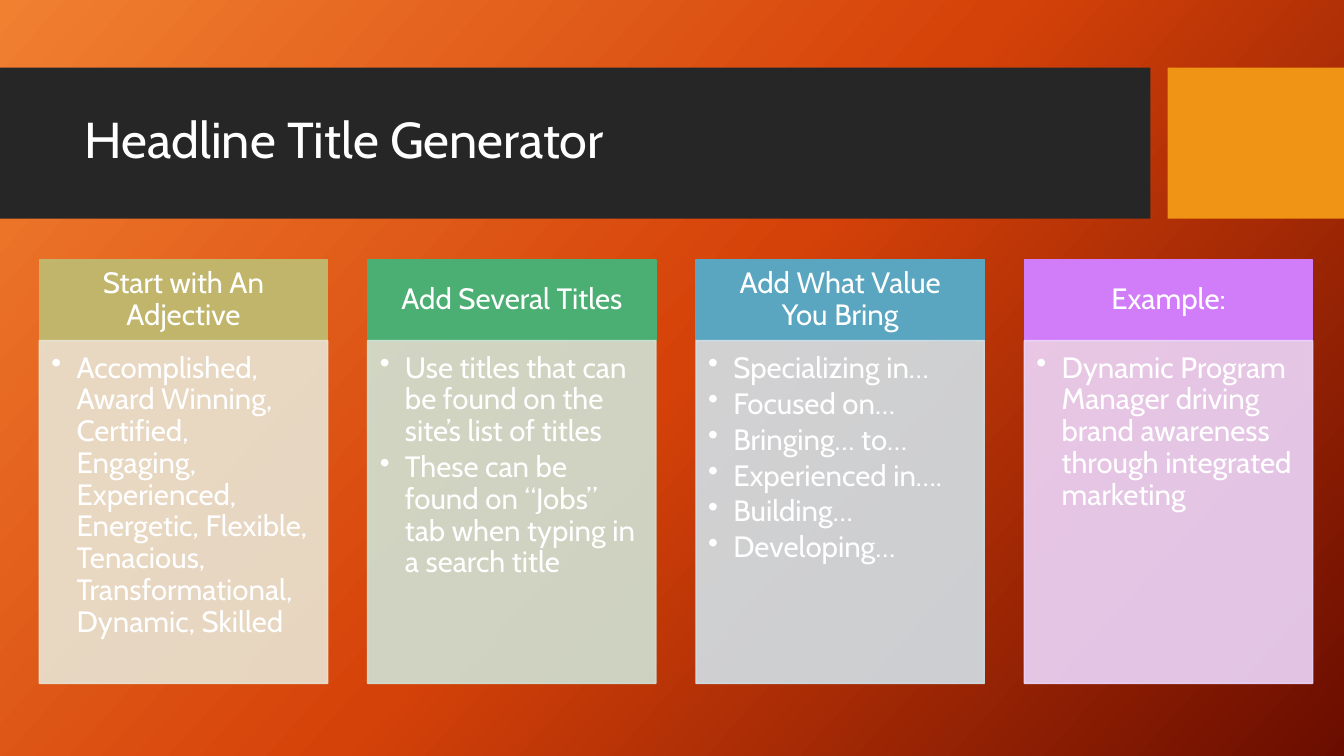
from copy import deepcopy

from lxml import etree
from pptx import Presentation
from pptx.dml.color import RGBColor
from pptx.enum.shapes import MSO_SHAPE
from pptx.enum.text import MSO_ANCHOR, PP_ALIGN
from pptx.oxml.ns import qn
from pptx.util import Inches, Pt

RECTANGLE = MSO_SHAPE.RECTANGLE
TOP, MIDDLE = MSO_ANCHOR.TOP, MSO_ANCHOR.MIDDLE
LEFT, CENTER = PP_ALIGN.LEFT, PP_ALIGN.CENTER

FONT = "Cabin"
WHITE = RGBColor(0xFF, 0xFF, 0xFF)
CHARCOAL = RGBColor(0x26, 0x26, 0x26)
AMBER = RGBColor(0xF0, 0x94, 0x15)
BACKGROUND_STOPS = [
    (0, RGBColor(0xF1, 0x80, 0x31)),
    (0.5, RGBColor(0xD5, 0x42, 0x09)),
    (1, RGBColor(0x6A, 0x0D, 0x00)),
]

COLUMNS = [
    ("Start with An Adjective",
     ["Accomplished, Award Winning, Certified, Engaging, Experienced, Energetic, "
      "Flexible, Tenacious, Transformational, Dynamic, Skilled"],
     RGBColor(0xC1, 0xB5, 0x6B), RGBColor(0xE9, 0xE5, 0xD4)),
    ("Add Several Titles",
     ["Use titles that can be found on the site’s list of titles",
      "These can be found on “Jobs” tab when typing in a search title"],
     RGBColor(0x4B, 0xAF, 0x73), RGBColor(0xD0, 0xE3, 0xD5)),
    ("Add What Value\nYou Bring",
     ["Specializing in…", "Focused on…", "Bringing… to…", "Experienced in….",
      "Building…", "Developing…"],
     RGBColor(0x5A, 0xA6, 0xC0), RGBColor(0xD2, 0xE1, 0xE8)),
    ("Example:",
     ["Dynamic Program Manager driving brand awareness through integrated marketing"],
     RGBColor(0xD1, 0x7D, 0xF9), RGBColor(0xEE, 0xD7, 0xFD)),
]


def paint_background(slide):
    """Fill the slide with the diagonal orange gradient."""
    fill = slide.background.fill
    fill.gradient()
    fill.gradient_angle = 360 - 42
    stop_list = slide.element.find(".//" + qn("a:gsLst"))
    stop_list.append(deepcopy(stop_list[0]))
    for stop, (position, color) in zip(fill.gradient_stops, BACKGROUND_STOPS):
        stop.position = position
        stop.color.rgb = color


def add_rectangle(slide, left, top, width, height, color, outlined=False):
    """Add a flat rectangle, optionally outlined in its own colour."""
    shape = slide.shapes.add_shape(
        RECTANGLE, Inches(left), Inches(top), Inches(width), Inches(height))
    shape.shadow.inherit = False
    shape.fill.solid()
    shape.fill.fore_color.rgb = color
    if outlined:
        shape.line.color.rgb = color
        shape.line.width = Pt(1)
    else:
        shape.line.fill.background()
    return shape


def set_opacity(shape, percent):
    """Make the fill and outline of a shape partly transparent."""
    for color in shape.element.spPr.iter(qn("a:srgbClr")):
        etree.SubElement(color, qn("a:alpha"), val=str(percent * 1000))


def add_bullet(paragraph):
    """Give a paragraph a hanging round bullet."""
    properties = paragraph._p.get_or_add_pPr()
    properties.set("marL", str(Inches(0.25)))
    properties.set("indent", str(-Inches(0.25)))
    etree.SubElement(properties, qn("a:buChar"), char="•")


def write_text(shape, lines, size, anchor, alignment, insets, bulleted=False):
    """Write white paragraphs into a shape."""
    frame = shape.text_frame
    frame.word_wrap = True
    frame.vertical_anchor = anchor
    (frame.margin_left, frame.margin_top,
     frame.margin_right, frame.margin_bottom) = map(Inches, insets)
    for index, line in enumerate(lines):
        paragraph = frame.add_paragraph() if index else frame.paragraphs[0]
        paragraph.text = line
        if bulleted:
            add_bullet(paragraph)
        paragraph.alignment = alignment
        paragraph.line_spacing = 0.9
        paragraph.space_after = Pt(3 if bulleted else 0)
        for run in paragraph.runs:
            run.font.name = FONT
            run.font.size = Pt(size)
            run.font.color.rgb = WHITE


def add_title_band(slide, top, height):
    """Add the dark title band, its amber end block and the title."""
    add_rectangle(slide, 0, top, 11.41, height, CHARCOAL)
    add_rectangle(slide, 11.58, top, 1.75, height, AMBER)
    title = slide.shapes.add_textbox(
        Inches(0.74), Inches(top + 0.15), Inches(10.51), Inches(1.18))
    write_text(title, ["Headline Title Generator"], 36, MIDDLE, LEFT,
               (0.1, 0.05, 0.1, 0.05))


def add_column(slide, left, top, width, height, column):
    """Add one heading block with its bulleted panel below."""
    heading, bullets, color, tint = column
    heading_height = 0.8
    header = add_rectangle(slide, left, top, width, heading_height, color, True)
    write_text(header, [heading], 21, MIDDLE, CENTER, (0.16, 0.09, 0.16, 0.09))
    panel = add_rectangle(slide, left, top + heading_height, width,
                          height - heading_height, tint, True)
    set_opacity(panel, 90)
    write_text(panel, bullets, 21, TOP, LEFT, (0.12, 0.12, 0.16, 0.18), True)


def add_columns(slide, left, top, width, height):
    """Spread the columns evenly over the given box."""
    column_width = 2.86
    pitch = (width - column_width) / (len(COLUMNS) - 1)
    for index, column in enumerate(COLUMNS):
        add_column(slide, left + index * pitch, top, column_width, height, column)


def main():
    """Build and save the presentation."""
    presentation = Presentation()
    presentation.slide_width = Inches(13.33)
    presentation.slide_height = Inches(7.5)
    slide = presentation.slides.add_slide(presentation.slide_layouts[6])
    paint_background(slide)
    add_title_band(slide, 0.67, 1.5)
    add_columns(slide, 0.39, 2.58, 12.63, 4.2)
    presentation.save("out.pptx")


if __name__ == "__main__":
    main()
